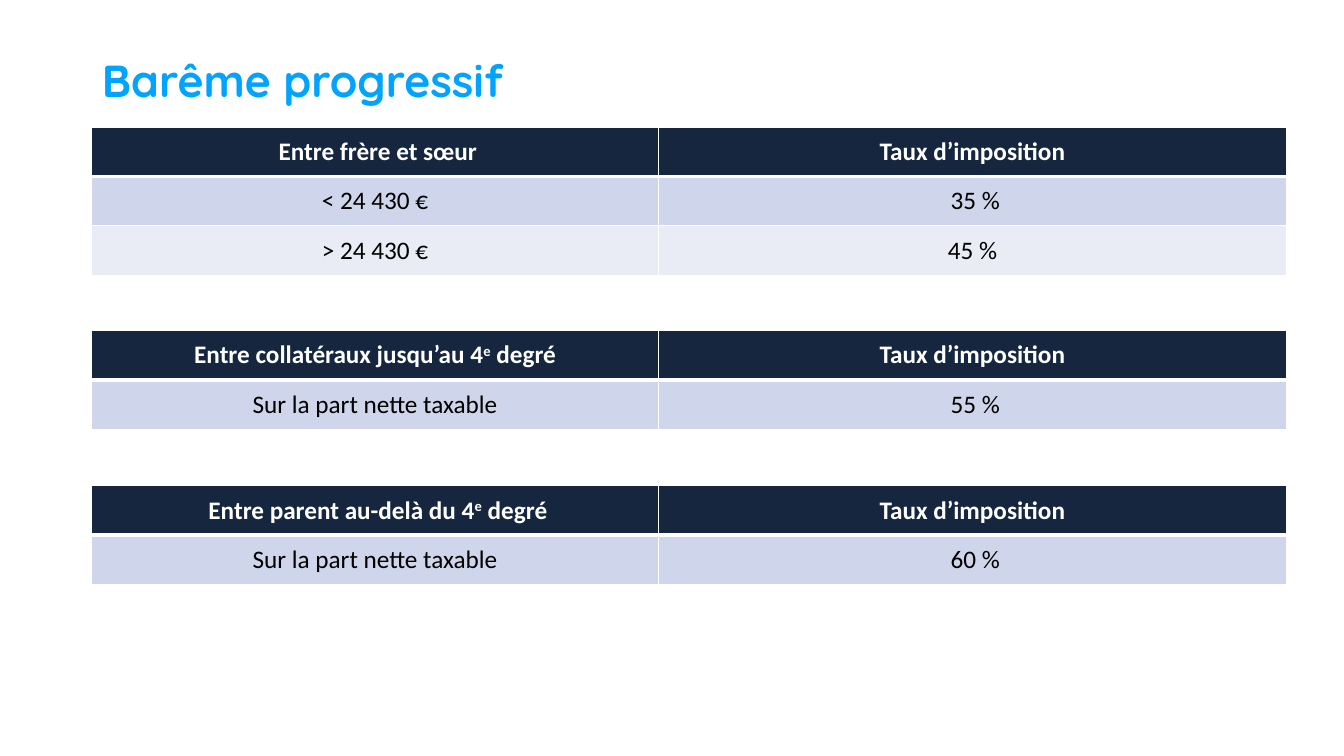
from dataclasses import dataclass

from lxml import etree
from pptx import Presentation
from pptx.dml.color import RGBColor
from pptx.enum.text import MSO_ANCHOR, MSO_AUTO_SIZE, PP_ALIGN
from pptx.oxml.ns import qn
from pptx.util import Inches, Pt

LEFT, CENTER = PP_ALIGN.LEFT, PP_ALIGN.CENTER
TOP, MIDDLE = MSO_ANCHOR.TOP, MSO_ANCHOR.MIDDLE
NO_AUTOFIT = MSO_AUTO_SIZE.NONE
TITLE_ONLY_LAYOUT = 5


@dataclass(frozen=True)
class Theme:
    title_font: str = "Quicksand"
    table_font: str = "Calibri"
    title_size: int = 32
    table_size: int = 18
    title_color: str = "00A4FF"
    header_fill: str = "15263E"
    header_text: str = "FFFFFF"
    body_text: str = "000000"
    body_fills: tuple[str, str] = ("CFD5EA", "E9EBF5")
    border: str = "FFFFFF"
    thin_border: int = 1
    thick_border: int = 3


@dataclass(frozen=True)
class RateTable:
    top: float
    category: str
    rates: list[tuple[str, str]]


THEME = Theme()
TABLE_LEFT = 0.91
COLUMN_WIDTHS = (5.62, 6.23)
ROW_HEIGHT = 0.49
RATE_HEADING = " Taux d’imposition "
RATE_TABLES = [
    RateTable(1.26, " Entre frère et sœur", [("< 24 430 €", " 35 %"), ("> 24 430 €", "45 %")]),
    RateTable(3.28, "Entre collatéraux jusqu’au 4^e^ degré", [("Sur la part nette taxable", " 55 %")]),
    RateTable(4.82, " Entre parent au-delà du 4^e^ degré", [("Sur la part nette taxable", " 60 %")]),
]


def add_title(slide, text: str) -> None:
    title = slide.shapes.title
    title.left, title.top = Inches(0.91), Inches(0.53)
    title.width, title.height = Inches(11.22), Inches(0.39)
    frame = title.text_frame
    frame.text = text
    frame.word_wrap = True
    frame.auto_size = NO_AUTOFIT
    frame.vertical_anchor = TOP
    paragraph = frame.paragraphs[0]
    paragraph.alignment = LEFT
    paragraph.line_spacing = 0.9
    paragraph.space_before = Pt(0)
    font = paragraph.runs[0].font
    font.name, font.size, font.bold = THEME.title_font, Pt(THEME.title_size), True
    font.color.rgb = RGBColor.from_string(THEME.title_color)


def set_borders(cell, row_index: int) -> None:
    """Draw thin borders, with a thick rule between the header and the body."""
    thick_side = {0: "lnB", 1: "lnT"}.get(row_index)
    properties = cell._tc.get_or_add_tcPr()
    for side in ("lnL", "lnR", "lnT", "lnB"):
        width = THEME.thick_border if side == thick_side else THEME.thin_border
        line = etree.SubElement(properties, qn(f"a:{side}"), w=str(Pt(width)))
        fill = etree.SubElement(line, qn("a:solidFill"))
        etree.SubElement(fill, qn("a:srgbClr"), val=THEME.border)


def fill_cell(cell, text: str, row_index: int) -> None:
    """Write and format one cell; text between carets is raised."""
    is_header = row_index == 0
    set_borders(cell, row_index)
    fill_color = THEME.header_fill if is_header else THEME.body_fills[(row_index - 1) % 2]
    cell.fill.solid()
    cell.fill.fore_color.rgb = RGBColor.from_string(fill_color)
    cell.vertical_anchor = MIDDLE
    cell.margin_left = cell.margin_right = Inches(0.05)
    cell.margin_top = cell.margin_bottom = Inches(0)
    paragraph = cell.text_frame.paragraphs[0]
    paragraph.alignment = CENTER
    for index, part in enumerate(text.split("^")):
        span = paragraph.add_run()
        span.text = part
        font = span.font
        font.name, font.size, font.bold = THEME.table_font, Pt(THEME.table_size), is_header
        font.color.rgb = RGBColor.from_string(THEME.header_text if is_header else THEME.body_text)
        if index % 2:
            span._r.get_or_add_rPr().set("baseline", "30000")


def add_rate_table(slide, rate_table: RateTable) -> None:
    rows = [(rate_table.category, RATE_HEADING), *rate_table.rates]
    table = slide.shapes.add_table(
        len(rows), len(COLUMN_WIDTHS), Inches(TABLE_LEFT), Inches(rate_table.top),
        Inches(sum(COLUMN_WIDTHS)), Inches(ROW_HEIGHT * len(rows)),
    ).table
    for column, width in zip(table.columns, COLUMN_WIDTHS):
        column.width = Inches(width)
    for row_index, texts in enumerate(rows):
        table.rows[row_index].height = Inches(ROW_HEIGHT)
        for column_index, text in enumerate(texts):
            fill_cell(table.cell(row_index, column_index), text, row_index)


def main() -> None:
    deck = Presentation()
    deck.slide_width, deck.slide_height = Inches(13.33), Inches(7.5)
    slide = deck.slides.add_slide(deck.slide_layouts[TITLE_ONLY_LAYOUT])
    add_title(slide, "Barême progressif")
    for rate_table in RATE_TABLES:
        add_rate_table(slide, rate_table)
    deck.save("out.pptx")


if __name__ == "__main__":
    main()
